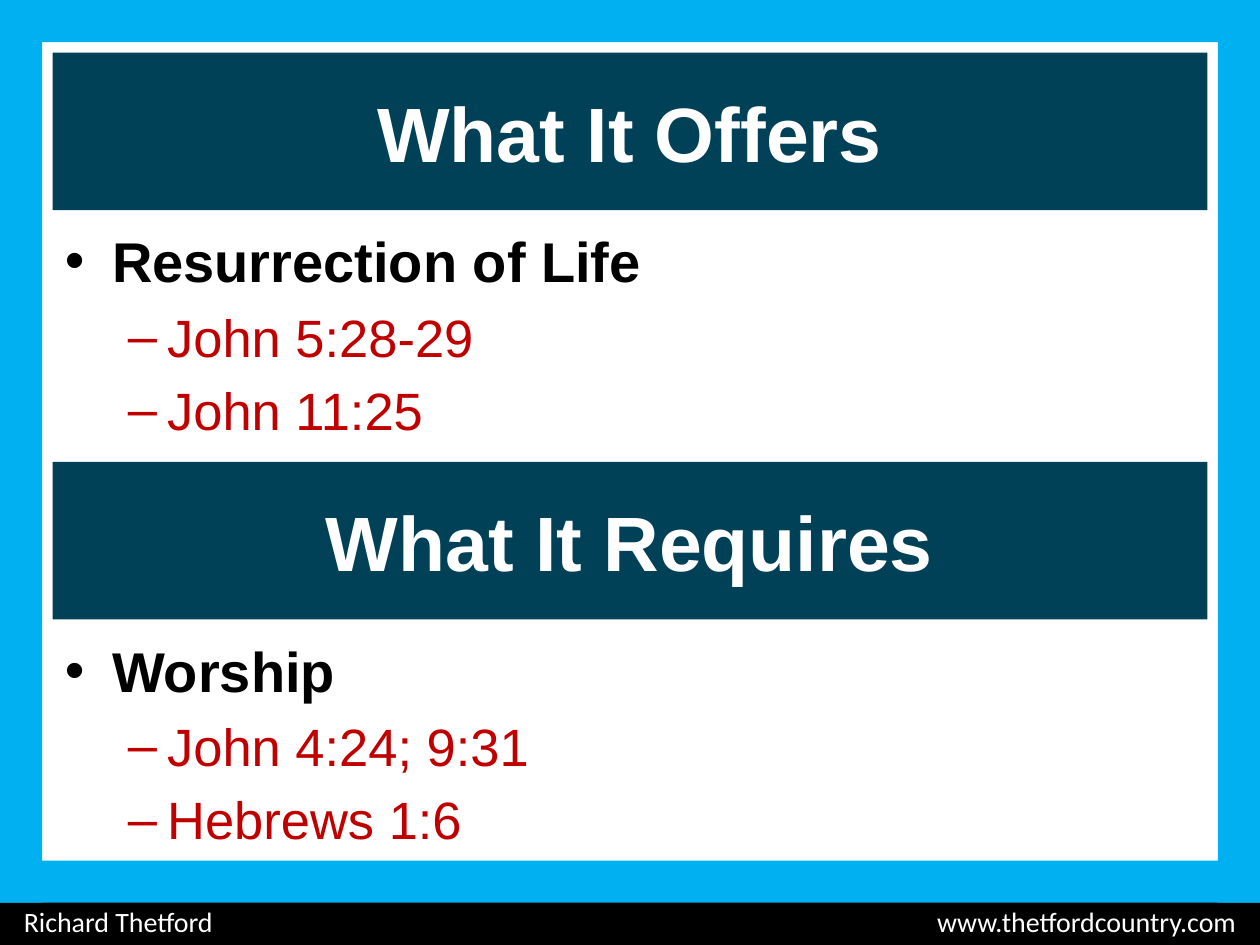
from lxml import etree
from pptx import Presentation
from pptx.dml.color import RGBColor
from pptx.enum.shapes import MSO_SHAPE
from pptx.enum.text import MSO_ANCHOR, PP_ALIGN
from pptx.oxml.ns import qn
from pptx.util import Cm, Pt

RECTANGLE = MSO_SHAPE.RECTANGLE
MIDDLE = MSO_ANCHOR.MIDDLE
LEFT, CENTER = PP_ALIGN.LEFT, PP_ALIGN.CENTER

COLORS = {
    "frame": "00B0F0",
    "banner": "004158",
    "footer": "000000",
    "light": "FFFFFF",
    "point": "000000",
    "verse": "C00000",
}
PAGE_WIDTH, PAGE_HEIGHT = 25.4, 19.05
FRAME = 0.85
FOOTER_HEIGHT = 0.94
FRAME_BOTTOM = 18.2
BANNER_HEIGHT = 3.18
LIST_OFFSET, LIST_HEIGHT = 3.39, 4.65
SECTION_LEFT, SECTION_WIDTH = 1.06, 23.28
SECTION_TOP, SECTION_STEP = 1.06, 8.25

SECTIONS = [
    ("What It Offers", "Resurrection of Life", ["John 5:28-29", "John 11:25"]),
    ("What It Requires", "Worship", ["John 4:24; 9:31", "Hebrews 1:6"]),
]


def add_bar(page, left, top, width, height, color):
    bar = page.shapes.add_shape(RECTANGLE, Cm(left), Cm(top), Cm(width), Cm(height))
    bar.shadow.inherit = False
    bar.fill.solid()
    bar.fill.fore_color.rgb = RGBColor.from_string(COLORS[color])
    bar.line.fill.background()
    return bar


def style(para, name, size, color, bold=False):
    para.font.name = name
    para.font.size = Pt(size)
    para.font.bold = bold
    para.font.color.rgb = RGBColor.from_string(COLORS[color])


def add_bullet(para, symbol, margin, hanging):
    """Give the paragraph a hanging bullet and 20% space before it."""
    props = para._p.get_or_add_pPr()
    props.set("marL", str(Cm(margin)))
    props.set("indent", str(-Cm(hanging)))
    space = etree.SubElement(props, qn("a:spcBef"))
    etree.SubElement(space, qn("a:spcPct"), val="20000")
    etree.SubElement(props, qn("a:buFont"), typeface="Arial")
    etree.SubElement(props, qn("a:buChar"), char=symbol)


def add_section(page, left, top, width, heading, point, verses):
    banner = add_bar(page, left, top, width, BANNER_HEIGHT, "banner")
    banner.text_frame.vertical_anchor = MIDDLE
    title = banner.text_frame.paragraphs[0]
    title.text = heading
    title.alignment = CENTER
    style(title, "Arial", 44, "light", bold=True)

    box = page.shapes.add_textbox(
        Cm(left), Cm(top + LIST_OFFSET), Cm(width), Cm(LIST_HEIGHT))
    frame = box.text_frame
    frame.word_wrap = True
    para = frame.paragraphs[0]
    para.text = point
    add_bullet(para, "•", 0.95, 0.95)
    style(para, "Arial", 32, "point", bold=True)
    for verse in verses:
        para = frame.add_paragraph()
        para.text = verse
        para.level = 1
        add_bullet(para, "–", 2.06, 0.79)
        style(para, "Arial", 30, "verse")


def add_footer(page, top, width, author, address):
    bar = add_bar(page, 0, top, width, FOOTER_HEIGHT, "footer")
    frame = bar.text_frame
    frame.vertical_anchor = MIDDLE
    margin = 0.48
    frame.margin_left = frame.margin_right = Cm(margin)
    para = frame.paragraphs[0]
    para.text = f"{author}\t{address}"
    para.alignment = LEFT
    tabs = etree.SubElement(para._p.get_or_add_pPr(), qn("a:tabLst"))
    etree.SubElement(tabs, qn("a:tab"), pos=str(Cm(width - 2 * margin)), algn="r")
    style(para, "Calibri", 16, "light")


def add_frame(page, width, bottom):
    for left in (0, width - FRAME):
        add_bar(page, left, 0, FRAME, bottom, "frame")
    for top in (0, bottom - FRAME):
        add_bar(page, 0, top, width, FRAME, "frame")


def main():
    deck = Presentation()
    deck.slide_width, deck.slide_height = Cm(PAGE_WIDTH), Cm(PAGE_HEIGHT)
    page = deck.slides.add_slide(deck.slide_layouts[6])
    add_footer(page, PAGE_HEIGHT - FOOTER_HEIGHT, PAGE_WIDTH,
               "Richard Thetford", "www.thetfordcountry.com")
    add_frame(page, PAGE_WIDTH, FRAME_BOTTOM)
    for index, section in enumerate(SECTIONS):
        top = SECTION_TOP + index * SECTION_STEP
        add_section(page, SECTION_LEFT, top, SECTION_WIDTH, *section)
    deck.save("out.pptx")


if __name__ == "__main__":
    main()
